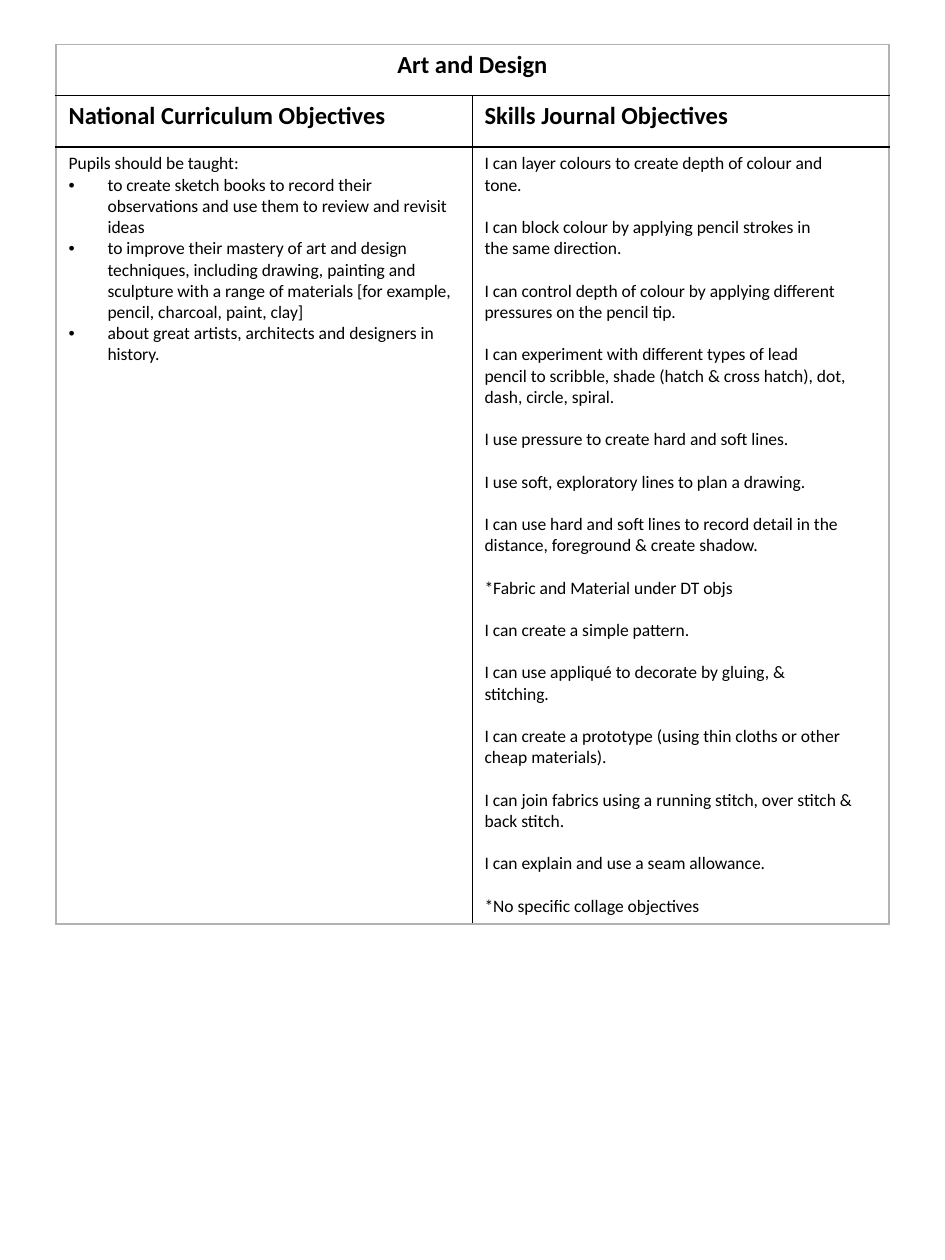
import lxml.etree
import pptx
import pptx.dml.color
import pptx.enum.text
import pptx.oxml.ns
import pptx.util

SCALE = 914400 / 126
COLORS = {"ink": "000000", "edge": "B2B2B2", "paper": "FFFFFF"}
TITLE = "Art and Design"
HEADS = ["National Curriculum Objectives", "Skills Journal Objectives"]
INTRO = "Pupils should be taught:"
AIMS = [
    "to create sketch books to record their observations and use them to review and revisit ideas",
    "to improve their mastery of art and design techniques, including drawing, painting and "
    "sculpture with a range of materials [for example, pencil, charcoal, paint, clay]",
    "about great artists, architects and designers in history.",
]
SKILLS = [
    ["I can layer colours to create depth of colour and", "tone."],
    ["I can block colour by applying pencil strokes in", "the same direction."],
    ["I can control depth of colour by applying different", "pressures on the pencil tip."],
    ["I can experiment with different types of lead",
     "pencil to scribble, shade (hatch & cross hatch), dot,", "dash, circle, spiral."],
    ["I use pressure to create hard and soft lines."],
    ["I use soft, exploratory lines to plan a drawing."],
    ["I can use hard and soft lines to record detail in the distance, "
     "foreground & create shadow."],
    ["*Fabric and Material under DT objs"],
    ["I can create a simple pattern."],
    ["I can use appliqué to decorate by gluing, &", "stitching."],
    ["I can create a prototype (using thin cloths or other", "cheap materials)."],
    ["I can join fabrics using a running stitch, over stitch &", "back stitch."],
    ["I can explain and use a seam allowance."],
    ["*No specific collage objectives"],
]


def px(count):
    return pptx.util.Emu(round(count * SCALE))


def tint(name):
    return pptx.dml.color.RGBColor.from_string(COLORS[name])


def add(parent, tag, **attrs):
    return lxml.etree.SubElement(parent, pptx.oxml.ns.qn(tag), **attrs)


def write(cell, text, size=10, bold=False, center=False, gap=0, bullet=False):
    frame = cell.text_frame
    para = frame.add_paragraph() if frame.text else frame.paragraphs[0]
    para.space_before = pptx.util.Pt(gap)
    if center:
        para.alignment = pptx.enum.text.PP_ALIGN.CENTER
    if bullet:
        props = para._p.get_or_add_pPr()
        props.set("marL", str(px(39)))
        props.set("indent", str(-px(39)))
        add(props, "a:buFont", typeface="Arial")
        add(props, "a:buChar", char="•")
    run = para.add_run()
    run.text = text
    run.font.name = "Calibri"
    run.font.size = pptx.util.Pt(size)
    run.font.bold = bold
    run.font.color.rgb = tint("ink")


def border(cell, side, color, width):
    props = cell._tc.get_or_add_tcPr()
    line = add(props, f"a:ln{side}", w=str(pptx.util.Pt(width)))
    fill = add(line, "a:solidFill")
    add(fill, "a:srgbClr", val=COLORS[color])


def style(table):
    rules = [("edge", 0.5), ("ink", 0.5), ("ink", 1), ("edge", 1)]
    inner, outer = ("ink", 0.5), ("edge", 1)
    for row in range(3):
        for col in range(2):
            cell = table.cell(row, col)
            middle = inner if row else outer
            border(cell, "L", *(middle if col else outer))
            border(cell, "R", *(outer if col else middle))
            border(cell, "T", *rules[row])
            border(cell, "B", *rules[row + 1])
            cell.fill.solid()
            cell.fill.fore_color.rgb = tint("paper")


def grid(slide):
    table = slide.shapes.add_table(3, 2, px(56), px(44), px(833), px(880)).table
    table.first_row = False
    table.horz_banding = False
    for col, width in zip(table.columns, (416, 417)):
        col.width = px(width)
    for row, height in zip(table.rows, (51, 52, 777)):
        row.height = px(height)
    style(table)
    table.cell(0, 0).merge(table.cell(0, 1))
    return table


def main():
    deck = pptx.Presentation()
    deck.slide_width, deck.slide_height = px(945), px(1260)
    slide = deck.slides.add_slide(deck.slide_layouts[6])
    table = grid(slide)
    write(table.cell(0, 0), TITLE, size=14, bold=True, center=True)
    for col, head in enumerate(HEADS):
        write(table.cell(1, col), head, size=14, bold=True)
    left, right = table.cell(2, 0), table.cell(2, 1)
    write(left, INTRO)
    for aim in AIMS:
        write(left, aim, bullet=True)
    for place, skill in enumerate(SKILLS):
        for step, line in enumerate(skill):
            write(right, line, gap=12.1 if place and not step else 0)
    deck.save("out.pptx")


if __name__ == "__main__":
    main()
